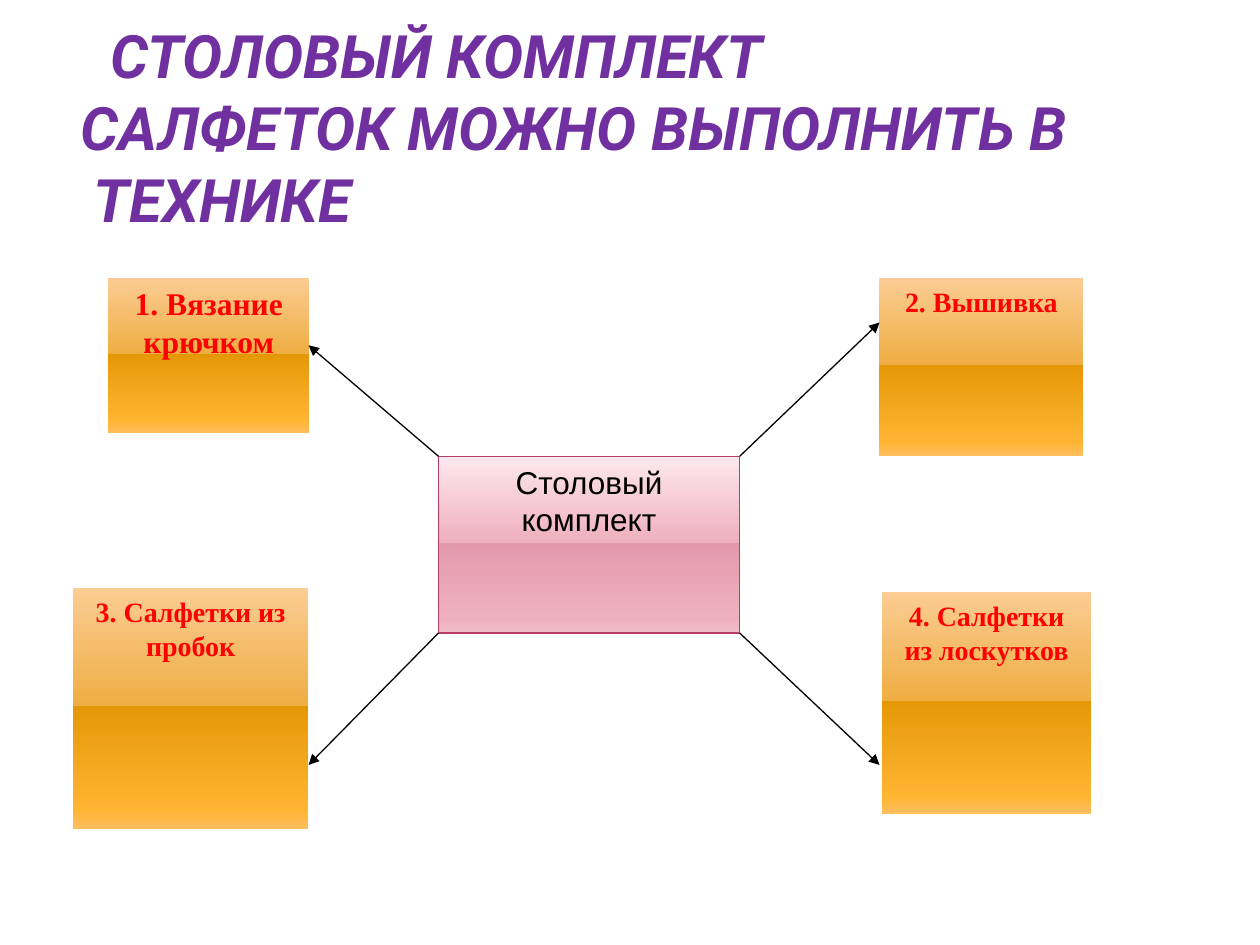
from lxml import etree
from pptx import Presentation
from pptx import util as u
from pptx.dml.color import RGBColor
from pptx.enum import shapes, text
from pptx.oxml.ns import qn

ORANGE = [(0, "FBCC93"), (49, "EFAE43"), (49, "E59807"), (92, "FFB432"), (100, "FFBE5F")]
PINK = [(0, "FCE8ED"), (49, "EFB0BE"), (49, "E39BAC"), (92, "EFB0BE"), (100, "F0BEC9")]


def color(value):
    return RGBColor.from_string(value)


class Diagram:
    """Holds the text styles and the current slide."""

    title_font = dict(name="Roboto", size=u.Pt(34.2), bold=True, italic=True)
    technique_font = dict(name="Times New Roman", bold=True)
    center_font = dict(name="Arial", size=u.Pt(18), bold=False)

    def __init__(self, slide):
        self.slide = slide

    def format_font(self, font, style, hue):
        for key, value in style.items():
            setattr(font, key, value)
        font.color.rgb = color(hue)

    def title(self, wording, left, top, width, height, first_indent):
        heading = self.slide.shapes.title
        place = dict(left=left, top=top, width=width, height=height)
        for key, value in place.items():
            setattr(heading, key, u.Cm(value))
        frame = heading.text_frame
        layout = dict(vertical_anchor=text.MSO_ANCHOR.BOTTOM, word_wrap=True,
                      auto_size=text.MSO_AUTO_SIZE.NONE,
                      margin_left=u.Cm(0.13), margin_right=u.Cm(0.13),
                      margin_top=0, margin_bottom=0)
        for key, value in layout.items():
            setattr(frame, key, value)
        frame.text = wording
        paragraph = frame.paragraphs[0]
        paragraph.alignment = text.PP_ALIGN.LEFT
        properties = paragraph._p.get_or_add_pPr()
        properties.set("marL", "0")
        properties.set("indent", str(u.Cm(first_indent)))
        for run in paragraph.runs:
            self.format_font(run.font, self.title_font, "7030A0")

    def box(self, label, place, stops, style, hue, outline=None):
        panel = self.slide.shapes.add_shape(
            shapes.MSO_SHAPE.RECTANGLE, *[u.Cm(value) for value in place])
        panel.shadow.inherit = False
        self.gradient(panel, stops)
        if outline:
            panel.line.color.rgb = color(outline)
            panel.line.width = u.Pt(0.9)
        else:
            panel.line.fill.background()
        frame = panel.text_frame
        frame.word_wrap = True
        frame.vertical_anchor = text.MSO_ANCHOR.TOP
        frame.text = label
        paragraph = frame.paragraphs[0]
        paragraph.alignment = text.PP_ALIGN.CENTER
        self.format_font(paragraph.runs[0].font, style, hue)

    def gradient(self, panel, stops):
        panel.fill.gradient()
        panel.fill.gradient_angle = 270
        stop_list = panel._element.spPr.find(qn("a:gradFill")).find(qn("a:gsLst"))
        for old_stop in list(stop_list):
            stop_list.remove(old_stop)
        for position, hue in stops:
            stop = etree.SubElement(stop_list, qn("a:gs"), pos=str(position * 1000))
            etree.SubElement(stop, qn("a:srgbClr"), val=hue)

    def arrow(self, start, end):
        link = self.slide.shapes.add_connector(
            shapes.MSO_CONNECTOR.STRAIGHT, *[u.Cm(value) for value in (*start, *end)])
        link.line.color.rgb = color("000000")
        link.line.width = u.Pt(0.75)
        etree.SubElement(link.line._get_or_add_ln(), qn("a:tailEnd"), type="triangle")
        etree.SubElement(link._element.spPr, qn("a:effectLst"))


def main():
    deck = Presentation()
    deck.slide_width, deck.slide_height = u.Cm(25.4), u.Cm(19.05)
    title_only = deck.slide_layouts[5]
    diagram = Diagram(deck.slides.add_slide(title_only))

    # Heading
    diagram.title("СТОЛОВЫЙ КОМПЛЕКТ\vСАЛФЕТОК МОЖНО ВЫПОЛНИТЬ В\v ТЕХНИКЕ",
                  1.5, 0, 20.22, 4.72, first_indent=0.6)

    # Central topic
    left, top, width, height = center = (8.84, 9.2, 6.07, 3.56)
    right, bottom = left + width, top + height
    diagram.box("Столовый комплект", center, PINK, diagram.center_font,
                "000000", outline="B83D68")

    # Techniques: label, size, place, corner of the centre, arrow tip
    techniques = [
        ("1. Вязание крючком", 18, (2.18, 5.61, 4.06, 3.12), (left, top), (6.22, 6.96)),
        ("2. Вышивка", 16, (17.73, 5.61, 4.11, 3.58), (right, top), (17.73, 6.5)),
        ("3. Салфетки из пробок", 16, (1.47, 11.86, 4.75, 4.85), (left, bottom), (6.22, 15.42)),
        ("4. Салфетки из лоскутков", 16, (17.78, 11.94, 4.22, 4.47), (right, bottom), (17.73, 15.42)),
    ]
    for label, size, place, corner, tip in techniques:
        style = dict(diagram.technique_font, size=u.Pt(size))
        diagram.box(label, place, ORANGE, style, "FF0000")
        diagram.arrow(corner, tip)

    deck.save("out.pptx")


if __name__ == "__main__":
    main()
